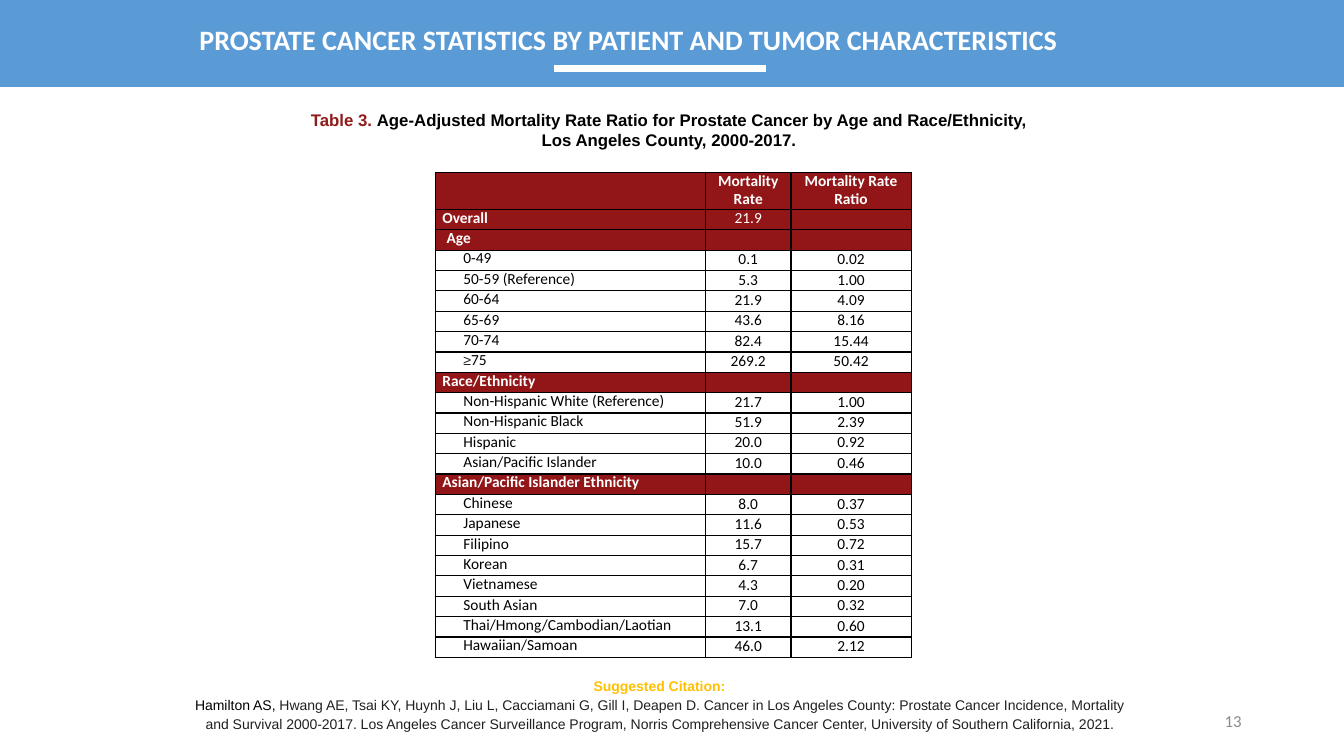
from dataclasses import dataclass

from lxml.etree import SubElement
from pptx import Presentation
from pptx.dml.color import RGBColor
from pptx.enum.shapes import MSO_CONNECTOR, MSO_SHAPE
from pptx.enum.text import MSO_ANCHOR, PP_ALIGN
from pptx.oxml.ns import qn
from pptx.util import Pt


@dataclass(frozen=True)
class Theme:
    banner: str = "5B9BD5"
    header: str = "921617"
    label: str = "8F1B1A"
    accent: str = "FFC000"
    white: str = "FFFFFF"
    black: str = "000000"
    body: str = "221F1F"
    symbol: str = "212121"
    muted: str = "8C8C8C"
    sans: str = "Calibri"
    arial: str = "Arial"
    title_size: float = 20
    caption_size: float = 12
    table_size: float = 11
    note_size: float = 10


T = Theme()

# Label, mortality rate, rate ratio; a row that is a section has no ratio
ROWS = [
    ("Overall", "21.9", ""),
    ("Age", "", ""),
    ("0-49", "0.1", "0.02"),
    ("50-59 (Reference)", "5.3", "1.00"),
    ("60-64", "21.9", "4.09"),
    ("65-69", "43.6", "8.16"),
    ("70-74", "82.4", "15.44"),
    ("≥75", "269.2", "50.42"),
    ("Race/Ethnicity", "", ""),
    ("Non-Hispanic White (Reference)", "21.7", "1.00"),
    ("Non-Hispanic Black", "51.9", "2.39"),
    ("Hispanic", "20.0", "0.92"),
    ("Asian/Pacific Islander", "10.0", "0.46"),
    ("Asian/Pacific Islander Ethnicity", "", ""),
    ("Chinese", "8.0", "0.37"),
    ("Japanese", "11.6", "0.53"),
    ("Filipino", "15.7", "0.72"),
    ("Korean", "6.7", "0.31"),
    ("Vietnamese", "4.3", "0.20"),
    ("South Asian", "7.0", "0.32"),
    ("Thai/Hmong/Cambodian/Laotian", "13.1", "0.60"),
    ("Hawaiian/Samoan", "46.0", "2.12"),
]


def rgb(value):
    return RGBColor.from_string(value)


def style(font, name, size, color=None, bold=False):
    font.name, font.size, font.bold = name, Pt(size), bold
    if color:
        font.color.rgb = rgb(color)


def add_text(s, box, anchor=MSO_ANCHOR.TOP):
    tf = s.shapes.add_textbox(*map(Pt, box)).text_frame
    tf.word_wrap = True
    tf.vertical_anchor = anchor
    return tf


def add_runs(p, *parts):
    for text, color in parts:
        r = p.add_run()
        r.text = text
        r.font.color.rgb = rgb(color)


def add_banner(s, box):
    x, y, w, h = box
    sp = s.shapes.add_shape(MSO_SHAPE.RECTANGLE, *map(Pt, box))
    sp.shadow.inherit = False
    sp.fill.solid()
    sp.fill.fore_color.rgb = rgb(T.banner)
    sp.line.fill.background()

    # Title
    tf = add_text(s, (x + 107.5, y + 6.5, 683, 43), MSO_ANCHOR.MIDDLE)
    p = tf.paragraphs[0]
    p.text = "PROSTATE CANCER STATISTICS BY PATIENT AND TUMOR CHARACTERISTICS"
    p.alignment = PP_ALIGN.CENTER
    style(p.font, T.sans, T.title_size, T.white, True)

    # Underline
    rule_y = Pt(y + h - 13)
    rule = s.shapes.add_connector(
        MSO_CONNECTOR.STRAIGHT, Pt(x + 395.5), rule_y, Pt(x + 547), rule_y)
    rule.line.color.rgb = rgb(T.white)
    rule.line.width = Pt(4.75)
    SubElement(rule._element.spPr, qn("a:effectLst"))


def add_caption(s, box):
    tf = add_text(s, box)
    p = tf.paragraphs[0]
    p.alignment = PP_ALIGN.CENTER
    p.space_before = Pt(4)
    style(p.font, T.arial, T.caption_size, bold=True)
    add_runs(p, ("Table 3. ", T.label),
             ("Age-Adjusted Mortality Rate Ratio for Prostate Cancer by Age "
              "and Race/Ethnicity,", T.black))
    p.add_line_break()
    add_runs(p, ("Los Angeles County, 2000-2017.", T.black))


def add_borders(cell):
    tc_pr = cell._tc.get_or_add_tcPr()
    for i, side in enumerate(("lnL", "lnR", "lnT", "lnB")):
        ln = tc_pr.makeelement(qn(f"a:{side}"), {"w": str(Pt(1))})
        fill = SubElement(ln, qn("a:solidFill"))
        SubElement(fill, qn("a:srgbClr"), val=T.black)
        tc_pr.insert(i, ln)


def fill_cell(cell, text, section, bold=False, indent=None):
    cell.margin_left = Pt(indent or 0)
    cell.margin_right = cell.margin_top = cell.margin_bottom = 0
    cell.fill.solid()
    cell.fill.fore_color.rgb = rgb(T.header if section else T.white)
    add_borders(cell)
    tf = cell.text_frame
    tf.text = text
    for p in tf.paragraphs:
        p.line_spacing = Pt(13.4 if indent is None else 12.9)
        p.space_before = Pt(0 if indent is None else 0.6)
        p.alignment = PP_ALIGN.CENTER if indent is None else PP_ALIGN.LEFT
        style(p.font, T.sans, T.table_size,
              T.white if section else T.black, bold)
    if text.startswith("≥"):
        p = tf.paragraphs[0]
        p.clear()
        add_runs(p, (text[0], T.symbol), (text[1:], T.black))
        p.runs[0].font.name = T.arial
        p.runs[0].font.size = Pt(T.note_size)


def add_rate_table(s, box):
    head_h = 26.6
    row_h = (box[3] - head_h) / len(ROWS)
    table = s.shapes.add_table(len(ROWS) + 1, 3, *map(Pt, box)).table
    for col, w in zip(table.columns, (193, 61, 86)):
        col.width = Pt(w)
    for i, row in enumerate(table.rows):
        row.height = Pt(row_h if i else head_h)

    # Header row
    for c, text in enumerate(("", "Mortality\nRate", "Mortality Rate\nRatio")):
        fill_cell(table.cell(0, c), text, True, bold=True)
        for p in table.cell(0, c).text_frame.paragraphs[1:]:
            p.line_spacing = Pt(12.4)

    # Sections and their groups
    for i, (label, *values) in enumerate(ROWS, 1):
        section = not values[-1]
        indent = (8 if label == "Age" else 5) if section else 20
        fill_cell(table.cell(i, 0), label, section, section, indent)
        for c, value in enumerate(values, 1):
            fill_cell(table.cell(i, c), value, section)


def add_citation(s, box):
    tf = add_text(s, box)
    tf.margin_left = tf.margin_right = Pt(10)
    heading, source = tf.paragraphs[0], tf.add_paragraph()
    for p in (heading, source):
        p.alignment = PP_ALIGN.CENTER
        p.line_spacing = 1.15
        style(p.font, T.arial, T.note_size, bold=p is heading)
    add_runs(heading, ("Suggested Citation:", T.accent))
    add_runs(source, ("Hamilton AS, ", T.black),
             ("Hwang AE, Tsai KY, Huynh J, Liu L, Cacciamani G, Gill I, "
              "Deapen D. Cancer in Los Angeles County: Prostate Cancer "
              "Incidence, Mortality and Survival 2000-2017. Los Angeles Cancer "
              "Surveillance Program, Norris Comprehensive Cancer Center, "
              "University of Southern California, 2021.", T.body))


def add_page_number(s, box):
    p = add_text(s, box, MSO_ANCHOR.MIDDLE).paragraphs[0]
    p.text = "13"
    p.alignment = PP_ALIGN.RIGHT
    style(p.font, T.sans, T.caption_size, T.muted)


def main():
    prs = Presentation()
    prs.slide_width, prs.slide_height = Pt(960), Pt(540)
    s = prs.slides.add_slide(prs.slide_layouts[6])
    add_banner(s, (0, 0, 960, 62))
    add_caption(s, (130, 75, 696, 41))
    add_rate_table(s, (311, 123, 340, 347))
    add_citation(s, (123, 478.5, 696, 47))
    add_page_number(s, (678, 500.5, 216, 29))
    prs.save("out.pptx")


if __name__ == "__main__":
    main()
